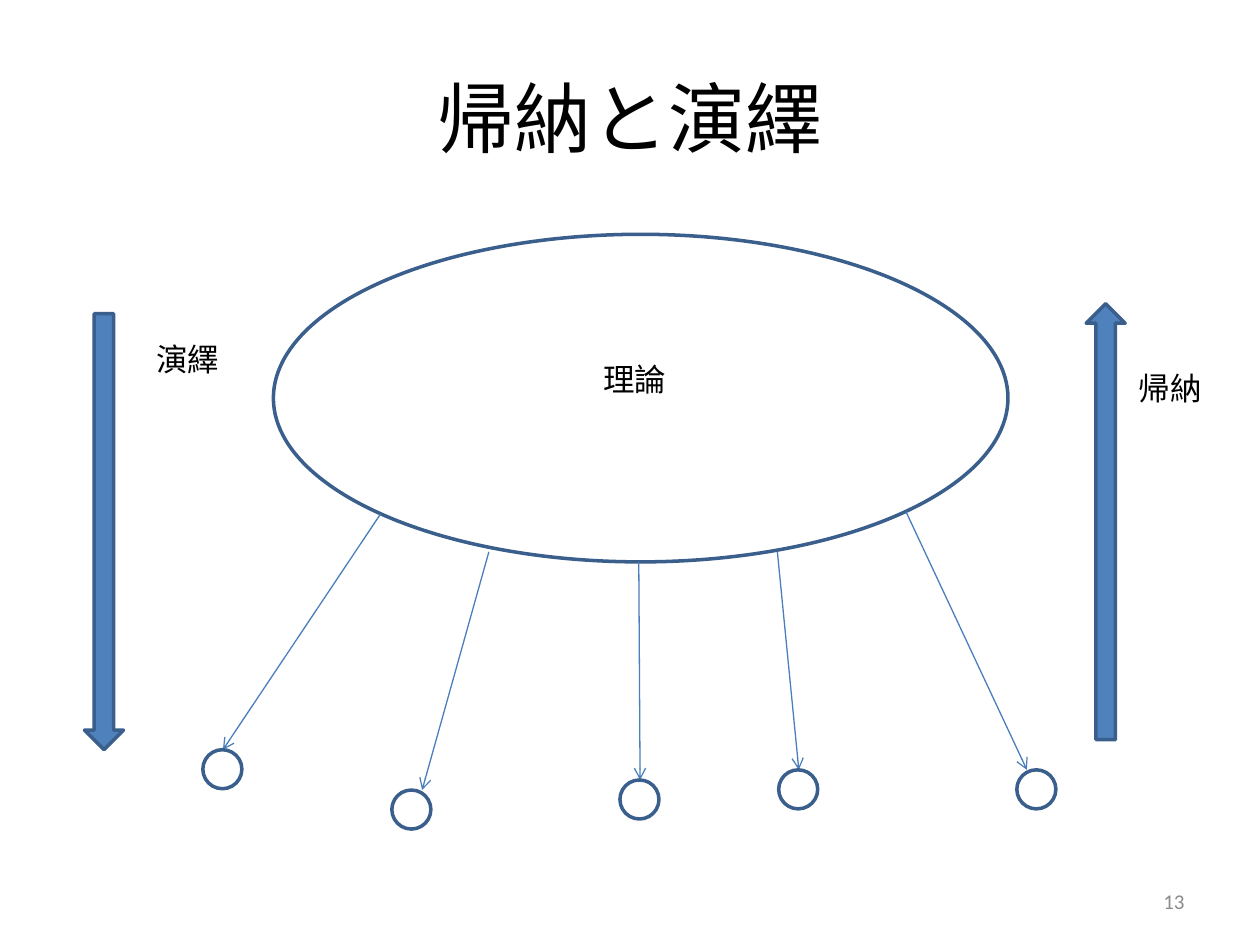
from lxml.etree import SubElement
from pptx import Presentation
from pptx.dml.color import RGBColor
from pptx.enum.shapes import MSO_CONNECTOR, MSO_SHAPE
from pptx.enum.text import MSO_ANCHOR, PP_ALIGN
from pptx.oxml.ns import qn
from pptx.util import Inches, Pt

BLACK = RGBColor(0x00, 0x00, 0x00)
GRAY = RGBColor(0x8C, 0x8C, 0x8C)
BLUE = RGBColor(0x4F, 0x81, 0xBD)
OUTLINE = RGBColor(0x3A, 0x5F, 0x8C)
RAY = RGBColor(0x4B, 0x7E, 0xBC)
FONT = "Calibri"

TITLE = "帰納と演繹"
PAGE_NUMBER = "13"
LABELS = [("理論", 4.69, 2.81), ("演繹", 1.14, 2.65), ("帰納", 8.94, 2.88)]
THEORY = (2.17, 1.86, 5.83, 2.6)
CASE_SIZE = 0.31
CASES = [
    ((3.02, 4.08), (1.77, 5.95), 1.61),
    ((3.88, 4.38), (3.35, 6.27), 3.11),
    ((5.07, 4.46), (5.08, 6.19), 4.92),
    ((6.17, 4.38), (6.34, 6.11), 6.18),
    ((7.19, 4.06), (8.15, 6.11), 8.07),
]
DIRECTIONS = [(0.67, 2.49, 0), (8.62, 2.41, 180)]
DIRECTION_SIZE = (0.31, 3.46)


def inches(*lengths):
    return [Inches(length) for length in lengths]


def write(frame, text, size, color, align):
    frame.text = text
    frame.word_wrap = True
    paragraph = frame.paragraphs[0]
    paragraph.alignment = align
    font = paragraph.runs[0].font
    font.name, font.size = FONT, Pt(size)
    font.color.rgb = color


def add_outlined(slide, kind, box, fill=None):
    outlined = slide.shapes.add_shape(kind, *inches(*box))
    outlined.shadow.inherit = False
    if fill is None:
        outlined.fill.background()
    else:
        outlined.fill.solid()
        outlined.fill.fore_color.rgb = fill
    outlined.line.color.rgb = OUTLINE
    outlined.line.width = Pt(2)
    return outlined


def add_ray(slide, start, end):
    ray = slide.shapes.add_connector(MSO_CONNECTOR.STRAIGHT, *inches(*start, *end))
    ray.line.color.rgb = RAY
    ray.line.width = Pt(0.75)
    SubElement(ray.line._get_or_add_ln(), qn("a:tailEnd"), type="arrow")
    SubElement(ray._element.spPr, qn("a:effectLst"))


def add_text(slide, text, box, size, color, align):
    frame = slide.shapes.add_textbox(*inches(*box)).text_frame
    write(frame, text, size, color, align)
    return frame


def main():
    deck = Presentation()
    deck.slide_width, deck.slide_height = inches(10, 7.5)
    slide = deck.slides.add_slide(deck.slide_layouts[5])

    title = slide.shapes.title
    title.left, title.top, title.width, title.height = inches(0.5, 0.3, 9, 1.25)
    write(title.text_frame, TITLE, 44, BLACK, PP_ALIGN.CENTER)
    title.text_frame.vertical_anchor = MSO_ANCHOR.MIDDLE

    add_outlined(slide, MSO_SHAPE.OVAL, THEORY)
    for start, end, left in CASES:
        add_ray(slide, start, end)
        add_outlined(slide, MSO_SHAPE.OVAL, (left, end[1], CASE_SIZE, CASE_SIZE))

    for left, top, rotation in DIRECTIONS:
        direction = add_outlined(
            slide, MSO_SHAPE.DOWN_ARROW, (left, top, *DIRECTION_SIZE), BLUE
        )
        direction.rotation = rotation

    for text, left, top in LABELS:
        add_text(slide, text, (left, top, 0.87, 0.4), 18, BLACK, PP_ALIGN.LEFT)

    number = add_text(
        slide, PAGE_NUMBER, (7.17, 6.95, 2.33, 0.4), 12, GRAY, PP_ALIGN.RIGHT
    )
    number.vertical_anchor = MSO_ANCHOR.MIDDLE

    deck.save("out.pptx")


if __name__ == "__main__":
    main()
